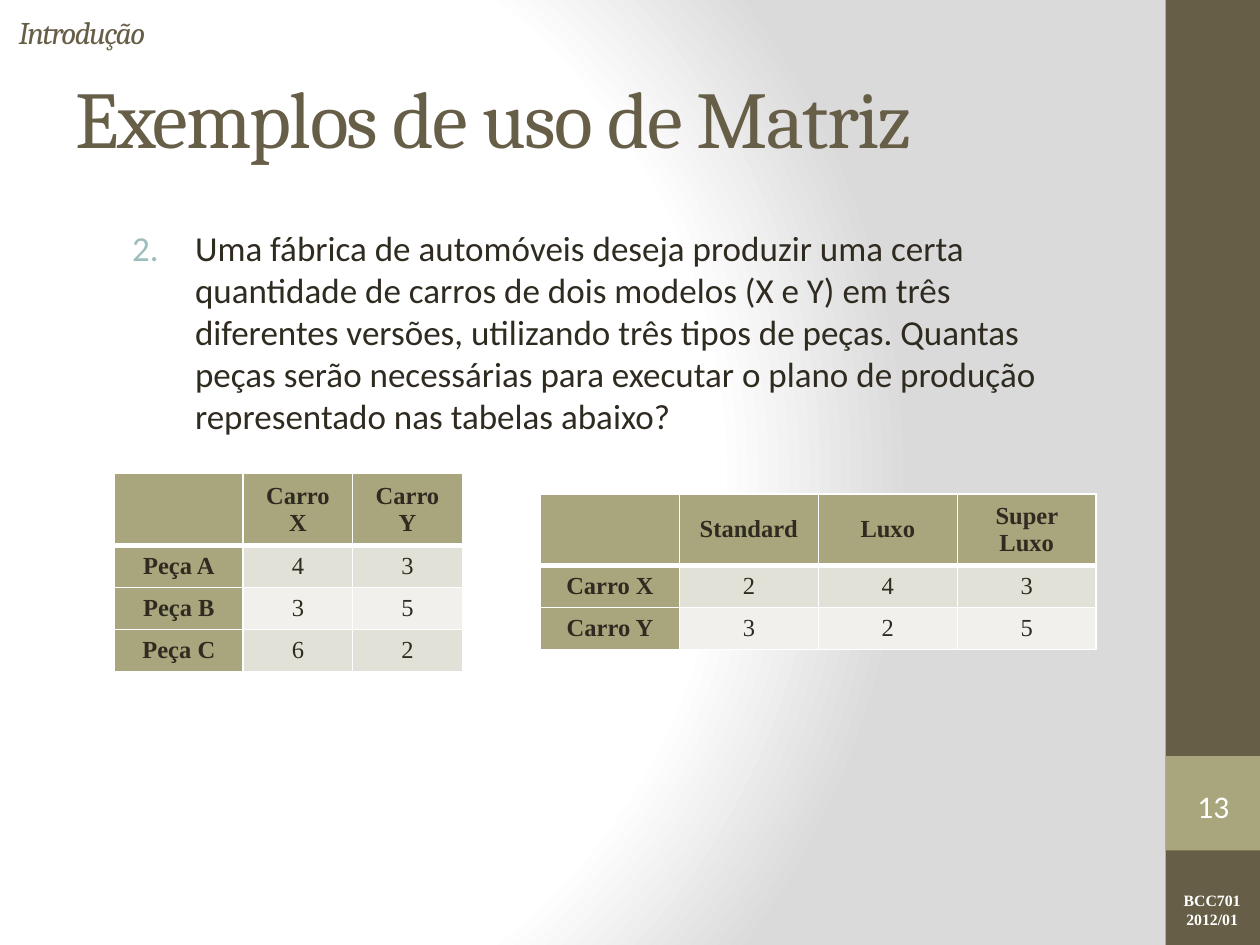
from dataclasses import dataclass

from lxml import etree
from pptx import Presentation
from pptx.dml.color import RGBColor
from pptx.enum.shapes import MSO_SHAPE
from pptx.enum.text import MSO_ANCHOR, PP_ALIGN
from pptx.oxml.ns import qn
from pptx.util import Inches, Pt

RECTANGLE = MSO_SHAPE.RECTANGLE
BRACKETS = MSO_SHAPE.DOUBLE_BRACKET
TOP, MIDDLE = MSO_ANCHOR.TOP, MSO_ANCHOR.MIDDLE
LEFT, CENTER = PP_ALIGN.LEFT, PP_ALIGN.CENTER
COLUMNS, ROWS = 40, 30  # page grid of quarter-inch squares


@dataclass(frozen=True)
class Theme:
    brown: str = "675E47"
    olive: str = "A9A57C"
    ink: str = "2F2B20"
    number: str = "9CBEBD"
    white: str = "FFFFFF"
    shade: str = "DADADA"
    bands: tuple = ("E2E1D7", "F1F0EC")
    heading: str = "Cambria"
    body: str = "Calibri"
    table: str = "Times New Roman"
    title_size: float = 46
    text_size: float = 20
    label_size: float = 18
    table_size: float = 14
    footer_size: float = 9


THEME = Theme()


def grid(*units):
    return [Inches(unit * 10 / COLUMNS) for unit in units]


def add_element(parent, tag, **attributes):
    element = etree.SubElement(parent, qn(tag))
    for name, value in attributes.items():
        element.set(name, str(value))
    return element


def style(para, font, size, color, bold=False, italic=False, align=LEFT):
    para.alignment = align
    para.font.name, para.font.size = font, Pt(size)
    para.font.bold, para.font.italic = bold, italic
    para.font.color.rgb = RGBColor.from_string(color)


def paint_background(page):
    """Circular gradient that stays white for three quarters of its radius."""
    page.background.fill.gradient()
    gradient = page._element.find(".//" + qn("a:gradFill"))
    for child in list(gradient):
        gradient.remove(child)
    stops = add_element(gradient, "a:gsLst")
    for share, color in ((0, THEME.white), (75, THEME.white), (100, THEME.shade)):
        stop = add_element(stops, "a:gs", pos=share * 1000)
        add_element(stop, "a:srgbClr", val=color)
    circle = add_element(gradient, "a:path", path="circle")
    add_element(circle, "a:fillToRect", l=20000, t=50000, r=100000, b=50000)


def add_block(page, place, color=None, kind=RECTANGLE):
    block = page.shapes.add_shape(kind, *grid(*place))
    block.shadow.inherit = False
    block.line.fill.background()
    if color:
        block.fill.solid()
        block.fill.fore_color.rgb = RGBColor.from_string(color)
    else:
        block.fill.background()
    return block


def add_text(page, place, lines, anchor=TOP, tracking=0, **look):
    box = page.shapes.add_textbox(*grid(*place))
    frame = box.text_frame
    frame.word_wrap = True
    frame.vertical_anchor = anchor
    frame.text = "\n".join(lines)
    for para in frame.paragraphs:
        style(para, **look)
        if tracking:
            for span in para.runs:
                span._r.get_or_add_rPr().set("spc", str(tracking * 100))
    return box


def add_numbered_item(page, place, number, text):
    box = page.shapes.add_textbox(*grid(*place))
    box.text_frame.word_wrap = True
    para = box.text_frame.paragraphs[0]
    para.text = text
    para.level = 1
    properties = para._p.get_or_add_pPr()
    properties.set("marL", str(Inches(0.95)))
    properties.set("indent", str(-Inches(0.5)))
    add_element(add_element(properties, "a:buClr"), "a:srgbClr", val=THEME.number)
    add_element(properties, "a:buFont", typeface=THEME.body)
    add_element(properties, "a:buAutoNum", type="arabicPeriod", startAt=number)
    style(para, THEME.body, THEME.text_size, THEME.ink)


def set_borders(cell, top, bottom):
    properties = cell._tc.get_or_add_tcPr()
    for side, width in (("L", 1), ("R", 1), ("T", top), ("B", bottom)):
        line = add_element(properties, f"a:ln{side}", w=Pt(width))
        add_element(add_element(line, "a:solidFill"), "a:srgbClr", val=THEME.white)


def add_matrix(page, left, top, widths, row_height, values):
    place = grid(left, top, sum(widths), row_height * len(values))
    frame = page.shapes.add_table(len(values), len(widths), *place)
    table = frame.table
    for column, width in zip(table.columns, grid(*widths)):
        column.width = width
    for r, row in enumerate(values):
        table.rows[r].height = grid(row_height)[0]
        for c, value in enumerate(row):
            cell = table.cell(r, c)
            is_header = r == 0 or c == 0
            set_borders(cell, top=3 if r == 1 else 1, bottom=3 if r == 0 else 1)
            cell.fill.solid()
            color = THEME.olive if is_header else THEME.bands[(r - 1) % 2]
            cell.fill.fore_color.rgb = RGBColor.from_string(color)
            cell.vertical_anchor = MIDDLE
            cell.text = value
            style(cell.text_frame.paragraphs[0], THEME.table, THEME.table_size,
                  THEME.ink, bold=is_header, align=CENTER)


def add_page_number(page, place, number):
    brackets = add_block(page, place, kind=BRACKETS)
    frame = brackets.text_frame
    frame.margin_left = frame.margin_right = 0
    frame.margin_top = frame.margin_bottom = 0
    frame.vertical_anchor = MIDDLE
    frame.text = number
    style(frame.paragraphs[0], THEME.body, THEME.label_size, THEME.white, align=CENTER)


def main():
    deck = Presentation()
    deck.slide_width, deck.slide_height = grid(COLUMNS, ROWS)
    page = deck.slides.add_slide(deck.slide_layouts[6])
    paint_background(page)

    # Side band with course code and page number
    add_block(page, (37, 0, 3, ROWS), THEME.brown)
    add_block(page, (37, 24, 3, 3), THEME.olive)
    add_text(page, (37.04, 28.08, 2.88, 1.6), ["BCC701", "2012/01"], font=THEME.table,
             size=THEME.footer_size, color=THEME.white, bold=True, align=CENTER)
    add_page_number(page, (37.32, 24.72, 2.4, 1.72), "13")

    # Headings
    add_text(page, (2, 1.2, 33.32, 5), ["Exemplos de uso de Matriz"], MIDDLE, -1,
             font=THEME.heading, size=THEME.title_size, color=THEME.brown)
    add_text(page, (0.2, 0.32, 33.28, 1.36), ["Introdução"], MIDDLE, -1,
             font=THEME.heading, size=THEME.label_size, color=THEME.brown, italic=True)

    # Problem statement
    add_numbered_item(
        page, (2, 7, 33.32, 21), 2,
        "Uma fábrica de automóveis deseja produzir uma certa quantidade de carros "
        "de dois modelos (X e Y) em três diferentes versões, utilizando três tipos "
        "de peças. Quantas peças serão necessárias para executar o plano de produção "
        "representado nas tabelas abaixo?")

    # Parts per car, then cars per version
    add_matrix(page, 3.64, 15.04, (4.08, 3.48, 3.48), 1.24, [
        ("", "Carro X", "Carro Y"),
        ("Peça A", "4", "3"),
        ("Peça B", "3", "5"),
        ("Peça C", "6", "2"),
    ])
    add_matrix(page, 17.16, 15.68, (4.41,) * 4, 1.33, [
        ("", "Standard", "Luxo", "Super Luxo"),
        ("Carro X", "2", "4", "3"),
        ("Carro Y", "3", "2", "5"),
    ])
    deck.save("out.pptx")


if __name__ == "__main__":
    main()
